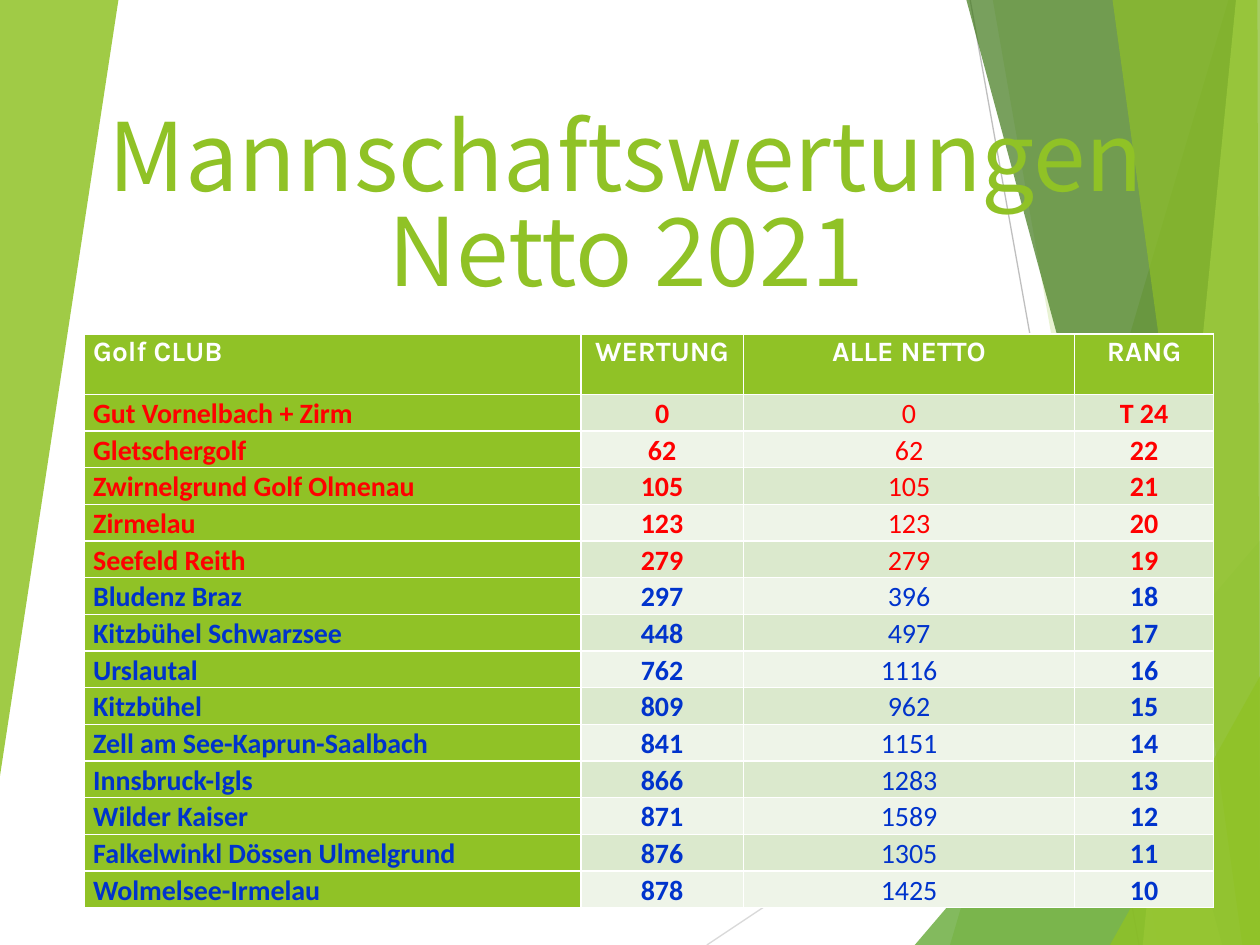
import pptx
import pptx.util
import pptx.dml.color
import pptx.enum.shapes
import pptx.enum.text
import pptx.oxml
import pptx.oxml.ns

Inches = pptx.util.Inches
Align = pptx.enum.text.PP_ALIGN
COLORS = {
    "green": "90C226", "leaf": "54A021", "forest": "3F7819", "lime": "C0E474",
    "light line": "D9D9D9", "line": "BFBFBF", "white": "FFFFFF",
    "red": "FF0000", "blue": "0033CC", "odd": "DBE9CD", "even": "EEF4E8",
}
WIDTH, HEIGHT = 10, 7.5
EDGE = 10.01  # facets reach just past the right edge


def rgb(name):
    return pptx.dml.color.RGBColor.from_string(COLORS[name])


def write(frame, text, align, spacing, **font_values):
    para = frame.paragraphs[0]
    para.alignment = align
    para.line_spacing = spacing
    span = para.add_run()
    span.text = text
    span.font.color.rgb = rgb(font_values.pop("color"))
    for key, value in font_values.items():
        setattr(span.font, key, value)


deck = pptx.Presentation()
deck.slide_width, deck.slide_height = Inches(WIDTH), Inches(HEIGHT)
page = deck.slides.add_slide(deck.slide_layouts.get_by_name("Title Only"))

# Background lines
for color, *ends in [
    ("light line", 5.61, HEIGHT, EDGE, 4.57),
    ("line", 7.7, 0, 9.04, HEIGHT),
]:
    line = page.shapes.add_connector(
        pptx.enum.shapes.MSO_CONNECTOR.STRAIGHT, *map(Inches, ends))
    line.line.color.rgb = rgb(color)
    line.line.width = pptx.util.Pt(0.75)
    line.element.spPr.append(pptx.oxml.parse_xml(
        f"<a:effectLst {pptx.oxml.ns.nsdecls('a')}/>"))

# Translucent facets: colour, opacity in percent, corners
facets = [
    ("green", 30, [(9.75, 0), (7.54, HEIGHT), (EDGE, HEIGHT), (EDGE, 0)]),
    ("green", 20, [(7.88, 0), (9.19, HEIGHT), (EDGE, HEIGHT), (EDGE, 0)]),
    ("leaf", 72, [(7.26, HEIGHT), (10, 4.29), (EDGE, HEIGHT)]),
    ("forest", 70, [(7.67, 0), (9.7, HEIGHT), (EDGE, HEIGHT), (EDGE, 0)]),
    ("lime", 70, [(9.81, 0), (9.07, HEIGHT), (EDGE, HEIGHT), (10, 0)]),
    ("green", 65, [(8.83, 0), (9.86, HEIGHT), (10, HEIGHT), (9.98, 0)]),
    ("green", 80, [(8.81, HEIGHT), (EDGE, 5.35), (EDGE, HEIGHT)]),
    ("green", 85, [(0, 0), (0.94, 0), (0, 6.16)]),
]
for color, opacity, corners in facets:
    start, *others = [(Inches(x), Inches(y)) for x, y in corners]
    builder = page.shapes.build_freeform(*start)
    builder.add_line_segments(others, close=True)
    facet = builder.convert_to_shape()
    facet.shadow.inherit = False
    facet.line.fill.background()
    facet.fill.solid()
    facet.fill.fore_color.rgb = rgb(color)
    tint = facet.element.spPr.find(".//" + pptx.oxml.ns.qn("a:srgbClr"))
    tint.append(pptx.oxml.parse_xml(
        f"<a:alpha {pptx.oxml.ns.nsdecls('a')} val='{opacity * 1000}'/>"))

# Title, raised above the facets
title = page.shapes.title
title.element.getparent().append(title.element)
title.left, title.top, title.width, title.height = map(Inches, (0.2, 0.52, 9.54, 1.95))
title.text_frame.word_wrap = True
title.text_frame.auto_size = pptx.enum.text.MSO_AUTO_SIZE.NONE
title.text_frame.vertical_anchor = pptx.enum.text.MSO_ANCHOR.BOTTOM
write(title.text_frame, "Mannschaftswertungen Netto 2021", Align.CENTER, 0.83,
      name="Noto Sans CJK KR", size=pptx.util.Pt(54), color="green")

# Results table
results = [
    ("Golf CLUB", "WERTUNG", "ALLE NETTO", "RANG"),
    ("Gut Vornelbach + Zirm", "0", "0", "T 24"),
    ("Gletschergolf", "62", "62", "22"),
    ("Zwirnelgrund Golf Olmenau", "105", "105", "21"),
    ("Zirmelau", "123", "123", "20"),
    ("Seefeld Reith", "279", "279", "19"),
    ("Bludenz Braz", "297", "396", "18"),
    ("Kitzbühel Schwarzsee", "448", "497", "17"),
    ("Urslautal", "762", "1116", "16"),
    ("Kitzbühel", "809", "962", "15"),
    ("Zell am See-Kaprun-Saalbach", "841", "1151", "14"),
    ("Innsbruck-Igls", "866", "1283", "13"),
    ("Wilder Kaiser", "871", "1589", "12"),
    ("Falkelwinkl Dössen Ulmelgrund", "876", "1305", "11"),
    ("Wolmelsee-Irmelau", "878", "1425", "10"),
]
LAST_RED_ROW = 5
column_widths = [3.94, 1.29, 2.63, 1.1]
row_heights = [0.48] + [0.29] * (len(results) - 1)
table = page.shapes.add_table(
    len(results), len(column_widths), Inches(0.67), Inches(2.65),
    Inches(sum(column_widths)), Inches(sum(row_heights))).table
table.first_col = True
for column, width in zip(table.columns, column_widths):
    column.width = Inches(width)
for row, height in zip(table.rows, row_heights):
    row.height = Inches(height)

for r, result in enumerate(results):
    is_header = r == 0
    band = "odd" if r % 2 else "even"
    text_color = "white" if is_header else "red" if r <= LAST_RED_ROW else "blue"
    for c, text in enumerate(result):
        cell = table.cell(r, c)
        cell.margin_left = cell.margin_right = Inches(0.07)
        cell.margin_top = cell.margin_bottom = 0
        cell.fill.solid()
        cell.fill.fore_color.rgb = rgb("green" if is_header or c == 0 else band)
        write(cell.text_frame, text, Align.CENTER if c else Align.LEFT, 1.07,
              name="Karla" if is_header else "Calibri", size=pptx.util.Pt(16),
              bold=is_header or c != 2, color=text_color)

deck.save("out.pptx")
